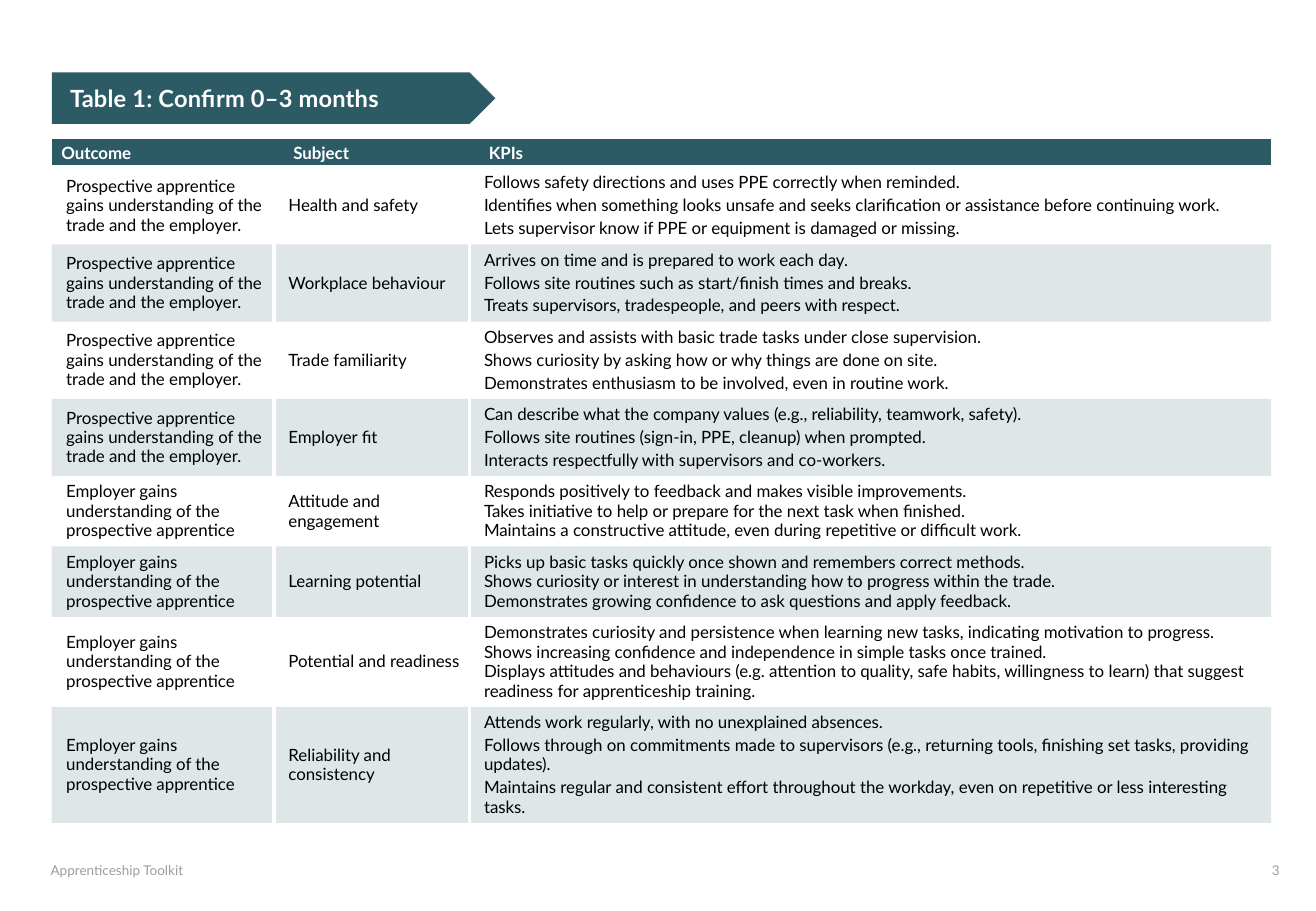
from dataclasses import dataclass
from typing import Any

from lxml.etree import SubElement
from pptx import Presentation
from pptx.dml.color import RGBColor
from pptx.enum.shapes import MSO_SHAPE
from pptx.enum.text import MSO_ANCHOR, MSO_AUTO_SIZE, PP_ALIGN
from pptx.oxml.ns import qn
from pptx.util import Pt


@dataclass(frozen=True)
class Theme:
    font: str = "Lato"
    teal: RGBColor = RGBColor(0x2C, 0x5B, 0x66)
    white: RGBColor = RGBColor(0xFF, 0xFF, 0xFF)
    black: RGBColor = RGBColor(0, 0, 0)
    grey: RGBColor = RGBColor(0x9B, 0x9D, 0xA1)
    title_size: float = 14
    title_tracking: float = 0.1
    table_size: float = 10
    footer_size: float = 8
    band_opacity: int = 15
    border_width: float = 2.25
    line_height: float = 11.5
    kpi_gap: float = 2


@dataclass(frozen=True)
class Box:
    left: float
    top: float
    width: float
    height: float

    def lengths(self) -> tuple[Pt, ...]:
        return Pt(self.left), Pt(self.top), Pt(self.width), Pt(self.height)


@dataclass(frozen=True)
class Measure:
    outcome: str
    subject: str
    kpis: tuple[str, ...]
    lines: int = 3

    def height(self) -> float:
        gaps = THEME.kpi_gap * (len(self.kpis) - 1)
        return self.lines * THEME.line_height + gaps + 7.2


@dataclass(frozen=True)
class FooterNote:
    text: str
    box: Box


THEME = Theme()
NO_GRID_STYLE = "{2D5ABB26-0587-4C30-8999-92F81FD0307C}"
HEADINGS = ("Outcome", "Subject", "KPIs")
COLUMN_WIDTHS = (131.76, 115.92, 475.2)
HEADING_HEIGHT = 16.56
INDENT = 5.76
WIDE_SPACING = {"space_before": Pt(6), "space_after": Pt(6)}
KPI_SPACING = {"space_before": Pt(0), "space_after": Pt(THEME.kpi_gap)}

APPRENTICE = "Prospective apprentice gains understanding of the trade and the employer."
EMPLOYER = "Employer gains understanding of the prospective apprentice"

MEASURES = (
    Measure(APPRENTICE, "Health and safety", (
        "Follows safety directions and uses PPE correctly when reminded.",
        "Identifies when something looks unsafe and seeks clarification or assistance before continuing work.",
        "Lets supervisor know if PPE or equipment is damaged or missing.")),
    Measure(APPRENTICE, "Workplace behaviour", (
        "Arrives on time and is prepared to work each day.",
        "Follows site routines such as start/finish times and breaks.",
        "Treats supervisors, tradespeople, and peers with respect.")),
    Measure(APPRENTICE, "Trade familiarity", (
        "Observes and assists with basic trade tasks under close supervision.",
        "Shows curiosity by asking how or why things are done on site.",
        "Demonstrates enthusiasm to be involved, even in routine work.")),
    Measure(APPRENTICE, "Employer fit", (
        "Can describe what the company values (e.g., reliability, teamwork, safety).",
        "Follows site routines (sign-in, PPE, cleanup) when prompted.",
        "Interacts respectfully with supervisors and co-workers.")),
    Measure(EMPLOYER, "Attitude and engagement", (
        "Responds positively to feedback and makes visible improvements.\n"
        "Takes initiative to help or prepare for the next task when finished.\n"
        "Maintains a constructive attitude, even during repetitive or difficult work.",)),
    Measure(EMPLOYER, "Learning potential", (
        "Picks up basic tasks quickly once shown and remembers correct methods.\n"
        "Shows curiosity or interest in understanding how to progress within the trade.\n"
        "Demonstrates growing confidence to ask questions and apply feedback.",)),
    Measure(EMPLOYER, "Potential and readiness", (
        "Demonstrates curiosity and persistence when learning new tasks, indicating motivation to progress.\n"
        "Shows increasing confidence and independence in simple tasks once trained.\n"
        "Displays attitudes and behaviours (e.g. attention to quality, safe habits, willingness to learn) "
        "that suggest readiness for apprenticeship training.",), 4),
    Measure(EMPLOYER, "Reliability and consistency", (
        "Attends work regularly, with no unexplained absences.",
        "Follows through on commitments made to supervisors (e.g., returning tools, finishing set tasks, "
        "providing updates).",
        "Maintains regular and consistent effort throughout the workday, even on repetitive or less "
        "interesting tasks."), 5),
)

FOOTER_NOTES = (
    FooterNote("Apprenticeship Toolkit", Box(30, 511.2, 157.68, 12.96)),
    FooterNote("3", Box(753.84, 511.2, 25.92, 8)),
)


def assign(target: Any, values: dict[str, Any]) -> None:
    for name, value in values.items():
        setattr(target, name, value)


def write(frame: Any, texts: tuple[str, ...], size: float, color: RGBColor,
          bold: bool = False, **layout: Any) -> None:
    for index, text in enumerate(texts):
        para = frame.add_paragraph() if index else frame.paragraphs[0]
        para.text = text
        assign(para, {"alignment": PP_ALIGN.LEFT, **layout})
        for span in para.runs:
            assign(span.font, {"name": THEME.font, "size": Pt(size), "bold": bold})
            span.font.color.rgb = color


def set_margins(target: Any, left: float, top: float, right: float, bottom: float) -> None:
    assign(target, {"margin_left": Pt(left), "margin_top": Pt(top),
                    "margin_right": Pt(right), "margin_bottom": Pt(bottom)})


def add_border(cell: Any, side: str) -> None:
    properties = cell._tc.get_or_add_tcPr()
    line = SubElement(properties, qn(f"a:ln{side}"), w=str(Pt(THEME.border_width)))
    fill = SubElement(line, qn("a:solidFill"))
    SubElement(fill, qn("a:srgbClr"), val=str(THEME.white))


def paint(cell: Any, color: RGBColor, opacity: int = 100) -> None:
    cell.fill.solid()
    cell.fill.fore_color.rgb = color
    if opacity < 100:
        shade = cell._tc.tcPr.find(qn("a:solidFill")).find(qn("a:srgbClr"))
        SubElement(shade, qn("a:alpha"), val=str(opacity * 1000))


def indent(cell: Any) -> None:
    for para in cell.text_frame.paragraphs:
        properties = para._p.get_or_add_pPr()
        properties.set("marL", str(Pt(INDENT)))
        properties.set("indent", "0")


def fill_heading(cell: Any, column: int) -> None:
    cell.vertical_anchor = MSO_ANCHOR.MIDDLE
    set_margins(cell, 5.76 if column else 0, 0.72, 0.72, 0.72)
    write(cell.text_frame, (HEADINGS[column],), THEME.table_size, THEME.white, True, **WIDE_SPACING)
    indent(cell)
    add_border(cell, "B")
    paint(cell, THEME.teal)


def fill_body(cell: Any, texts: tuple[str, ...], column: int, banded: bool) -> None:
    cell.vertical_anchor = MSO_ANCHOR.MIDDLE
    padding = 3.6 if column else 0.72
    set_margins(cell, 2.88, padding, 2.88, padding)
    spacing = KPI_SPACING if column == 2 else WIDE_SPACING
    write(cell.text_frame, texts, THEME.table_size, THEME.black,
          line_spacing=Pt(THEME.line_height), **spacing)
    indent(cell)
    for side in ("R", "LR", "L")[column]:
        add_border(cell, side)
    if banded:
        paint(cell, THEME.teal, THEME.band_opacity)
    else:
        cell.fill.background()


def add_title(page: Any) -> None:
    banner = page.shapes.add_shape(MSO_SHAPE.PENTAGON, *Box(30.8, 43, 262.8, 30.4).lengths())
    banner.shadow.inherit = False
    banner.fill.solid()
    banner.fill.fore_color.rgb = THEME.teal
    banner.line.fill.background()
    title = page.shapes.title
    left, top, width, height = Box(41.5, 49.5, 238.32, 17.28).lengths()
    assign(title, {"left": left, "top": top, "width": width, "height": height})
    frame = title.text_frame
    assign(frame, {"word_wrap": True, "auto_size": MSO_AUTO_SIZE.NONE, "vertical_anchor": MSO_ANCHOR.TOP})
    set_margins(frame, 0, 0, 0, 0)
    write(frame, ("Table 1: Confirm 0–3 months",), THEME.title_size, THEME.white, True, **WIDE_SPACING)
    for properties in title.element.iter(qn("a:rPr")):
        properties.set("spc", str(round(THEME.title_tracking * 100)))
    banner.element.addnext(title.element)


def add_measures(page: Any) -> None:
    heights = (HEADING_HEIGHT, *(measure.height() for measure in MEASURES))
    box = Box(30.6, 82.5, sum(COLUMN_WIDTHS), sum(heights))
    holder = page.shapes.add_table(len(heights), len(HEADINGS), *box.lengths())
    next(holder.element.iter(qn("a:tableStyleId"))).text = NO_GRID_STYLE
    table = holder.table
    assign(table, {"first_row": True, "horz_banding": False})
    for column, width in enumerate(COLUMN_WIDTHS):
        table.columns[column].width = Pt(width)
        fill_heading(table.cell(0, column), column)
    for row, height in enumerate(heights):
        table.rows[row].height = Pt(height)
    for row, measure in enumerate(MEASURES, 1):
        contents = ((measure.outcome,), (measure.subject,), measure.kpis)
        for column, texts in enumerate(contents):
            fill_body(table.cell(row, column), texts, column, row % 2 == 0)


def add_footer(page: Any, note: FooterNote) -> None:
    frame = page.shapes.add_textbox(*note.box.lengths()).text_frame
    frame.word_wrap = True
    set_margins(frame, 0, 0, 0, 0)
    write(frame, (note.text,), THEME.footer_size, THEME.grey)


def main() -> None:
    deck = Presentation()
    assign(deck, {"slide_width": Pt(780), "slide_height": Pt(540)})
    page = deck.slides.add_slide(deck.slide_layouts[5])
    add_title(page)
    add_measures(page)
    for note in FOOTER_NOTES:
        add_footer(page, note)
    deck.save("out.pptx")


if __name__ == "__main__":
    main()
